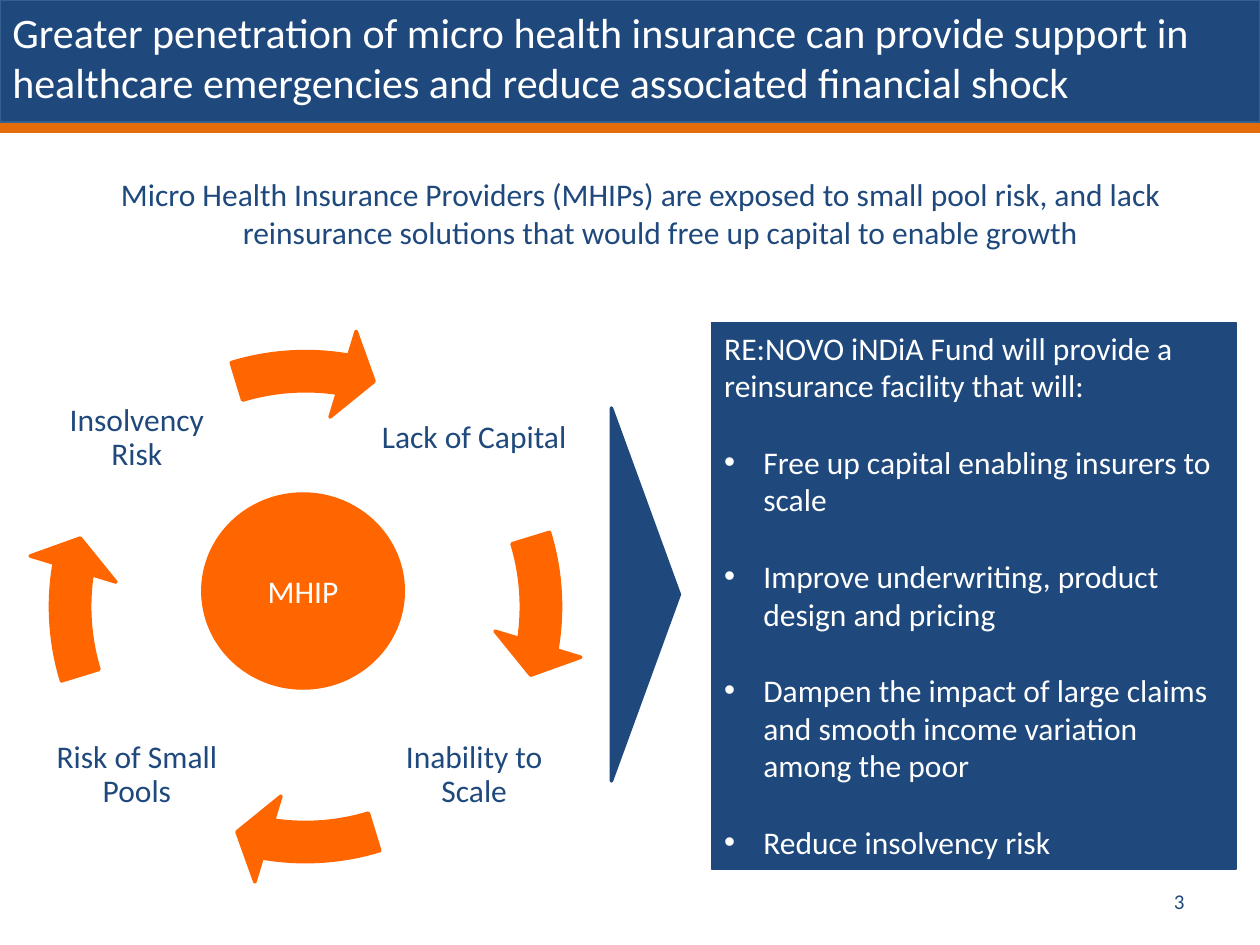
from lxml import etree
from pptx import Presentation
from pptx import util as u
from pptx.dml.color import RGBColor
from pptx.enum import shapes, text
from pptx.oxml.ns import qn

NAVY = RGBColor(0x1F, 0x49, 0x7D)
BLUE = RGBColor(0x37, 0x60, 0x92)
ORANGE = RGBColor(0xFF, 0x66, 0x00)
AMBER = RGBColor(0xE4, 0x6C, 0x0A)
WHITE = RGBColor(0xFF, 0xFF, 0xFF)

LEFT, CENTER, RIGHT = text.PP_ALIGN.LEFT, text.PP_ALIGN.CENTER, text.PP_ALIGN.RIGHT
TOP, MIDDLE = text.MSO_ANCHOR.TOP, text.MSO_ANCHOR.MIDDLE
KIND = shapes.MSO_SHAPE
INDENT = u.Cm(0.79)


class SlideBuilder:
    font_name = "Calibri"

    def __init__(self, slide):
        self.slide = slide

    def shape(self, kind, box, fill, line=None, width=2, rotation=0, adjust=()):
        item = self.slide.shapes.add_shape(kind, *map(u.Cm, box))
        item.shadow.inherit = False
        item.fill.solid()
        item.fill.fore_color.rgb = fill
        item.line.color.rgb = line or fill
        item.line.width = u.Pt(width)
        item.rotation = rotation
        for index, value in enumerate(adjust):
            item.adjustments[index] = value
        return item

    def textbox(self, box, words, **style):
        item = self.slide.shapes.add_textbox(*map(u.Cm, box))
        self.label(item, words, **style)
        return item

    def label(self, item, words, size=18, color=NAVY, anchor=TOP, margin=None, **layout):
        frame = item.text_frame
        frame.word_wrap = True
        frame.vertical_anchor = anchor
        if margin is not None:
            for side in ("left", "top", "right", "bottom"):
                setattr(frame, f"margin_{side}", u.Cm(margin))
        self.paragraph(frame.paragraphs[0], words, size, color, **layout)

    def paragraph(self, para, words, size, color, **layout):
        for name, value in {"alignment": LEFT, **layout}.items():
            setattr(para, name, value)
        run = para.add_run()
        run.text = words
        look = {"name": self.font_name, "size": u.Pt(size)}
        for name, value in look.items():
            setattr(run.font, name, value)
        run.font.color.rgb = color

    def hang(self, para, bullet=None):
        props = para._p.get_or_add_pPr()
        props.set("marL", str(INDENT))
        props.set("indent", str(-INDENT))
        if bullet:
            etree.SubElement(props, qn("a:buFont")).set("typeface", "Arial")
            etree.SubElement(props, qn("a:buChar")).set("char", bullet)

    def bullets(self, item, lines, size, color, gap):
        for words in lines:
            para = item.text_frame.add_paragraph()
            self.paragraph(para, words, size, color, space_before=u.Pt(gap))
            self.hang(para, "•")


def main():
    deck = Presentation()
    deck.slide_width, deck.slide_height = u.Cm(25.4), u.Cm(19.05)
    page = SlideBuilder(deck.slides.add_slide(deck.slide_layouts[6]))

    # Title band
    title = page.shape(KIND.RECTANGLE, (0, 0, 25.4, 2.46), NAVY, BLUE, 0.75)
    page.label(title, "Greater penetration of micro health insurance can provide support in "
               "healthcare emergencies and reduce associated financial shock",
               size=24, color=WHITE)
    page.shape(KIND.RECTANGLE, (0, 2.51, 25.4, 0.13), AMBER)

    # Key message
    message = page.textbox(
        (1.32, 3.4, 23.2, 1.8),
        "Micro Health Insurance Providers (MHIPs) are exposed to small pool risk, and lack "
        "reinsurance solutions that would free up capital to enable growth",
        alignment=CENTER)
    page.hang(message.text_frame.paragraphs[0])

    # Risk cycle: each stage and its arrow sit a quarter turn after the last
    center_x, center_y, ring, offset, stage_size = 6.16, 12.23, 11.3, 3.4, 3.99
    quarter, full = 54, 216  # adjustment units of an angle
    stages = [("Lack of Capital", 1, -1), ("Inability to Scale", 1, 1),
              ("Risk of Small Pools", -1, 1), ("Insolvency Risk", -1, -1)]
    for step, (stage, side, level) in enumerate(stages):
        page.textbox((center_x + side * offset - stage_size / 2,
                      center_y + level * offset - stage_size / 2, stage_size, stage_size),
                     stage, anchor=MIDDLE, margin=0.08, alignment=CENTER, line_spacing=0.9)
        turn = step * quarter
        page.shape(KIND.CIRCULAR_ARROW,
                   (center_x - ring / 2, center_y - ring / 2, ring, ring), ORANGE,
                   adjust=(0.07, 4.65, 5.51 + turn, (205.84 + turn) % full, 0.08))
    hub = page.shape(KIND.OVAL, (4.09, 9.96, 4.04, 3.91), ORANGE)
    page.label(hub, "MHIP", color=WHITE, anchor=MIDDLE, alignment=CENTER)

    # Pointer to the solution panel
    page.shape(KIND.ISOSCELES_TRIANGLE, (9.25, 11.3, 7.52, 1.37), NAVY, rotation=90)

    # Solution panel
    panel = page.shape(KIND.RECTANGLE, (14.35, 6.5, 10.57, 11.02), NAVY, width=0.75)
    page.label(panel, "RE:NOVO iNDiA Fund will provide a reinsurance facility that will:",
               color=WHITE)
    page.bullets(panel, ["Free up capital enabling insurers to scale",
                         "Improve underwriting, product design and pricing",
                         "Dampen the impact of large claims and smooth income variation "
                         "among the poor",
                         "Reduce insolvency risk"], 18, WHITE, gap=22)

    # Page number
    page.textbox((18.21, 17.65, 5.92, 1.02), "3", size=12, anchor=MIDDLE, alignment=RIGHT)

    deck.save("out.pptx")


if __name__ == "__main__":
    main()
